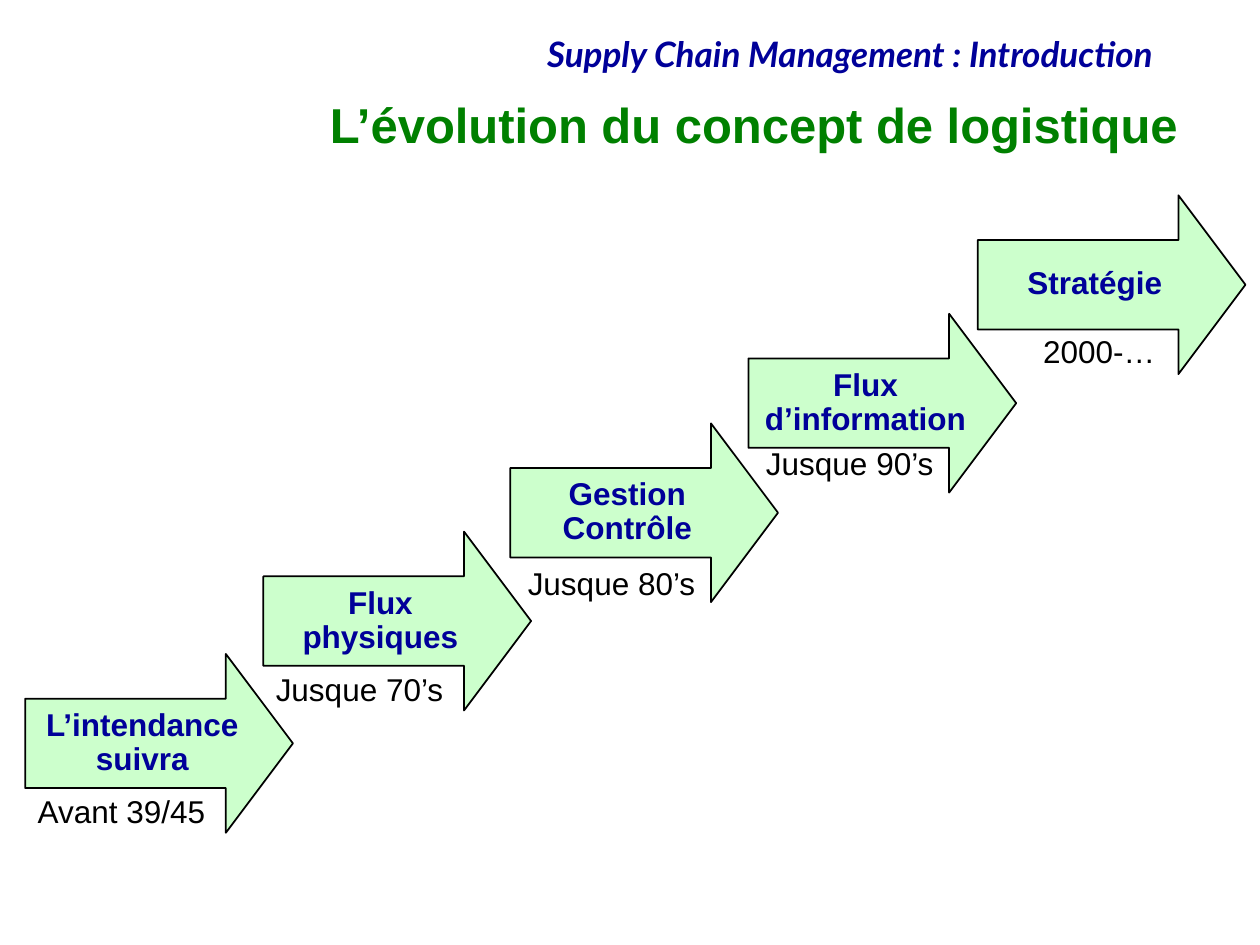
from pptx import Presentation
from pptx.dml.color import RGBColor
from pptx.enum.shapes import MSO_SHAPE as Shape
from pptx.enum.text import MSO_ANCHOR as Anchor, MSO_AUTO_SIZE as Fit, PP_ALIGN as Align
from pptx.util import Pt

HEAD = "Supply Chain Management : Introduction"
TITLE = "L’évolution du concept de logistique"
# label, arrow left and top, date, date left, top and width
STEPS = [
    ("L’intendance suivra", 14.4, 373.7, "Avant 39/45", 14.4, 451.4, 110),
    ("Flux physiques", 150.5, 303.8, "Jusque 70’s", 150.5, 381.6, 110),
    ("Flux d’information", 427.7, 179.3, "Jusque 90’s", 430.6, 252.7, 110),
    ("Gestion\nContrôle", 291.6, 241.9, "Jusque 80’s", 294.5, 321.1, 110),
    ("Stratégie", 558.7, 111.6, "2000-…", 589, 188.6, 79),
]
WIDE, HIGH = 153, 102.2
NAVY, GREEN, MINT, BLACK = "000099", "008000", "CCFFCC", "000000"


def color(code):
    """Turn a hex string into a colour."""
    return RGBColor.from_string(code)


def write(shape, text, size=18, font="Arial", ink=BLACK, bold=False,
          slant=False, align=Align.LEFT, anchor=Anchor.TOP, wrap=True, fit=Fit.NONE):
    """Put formatted text into a shape."""
    frame = shape.text_frame
    frame.word_wrap, frame.auto_size = wrap, fit
    frame.vertical_anchor = anchor
    frame.margin_left = frame.margin_right = Pt(7.2)
    frame.margin_top = frame.margin_bottom = Pt(3.6)
    para = frame.paragraphs[0]
    para.text = text
    para.alignment, para.line_spacing = align, 0.9
    para.space_before = Pt(0)
    for run in para.runs:
        face = run.font
        face.name, face.size = font, Pt(size)
        face.bold, face.italic = bold, slant
        face.color.rgb = color(ink)


def place(shape, *box):
    """Move and size a shape."""
    shape.left, shape.top, shape.width, shape.height = map(Pt, box)


def arrow(slide, text, left, top):
    """Draw one step of the staircase."""
    shape = slide.shapes.add_shape(Shape.RIGHT_ARROW, *map(Pt, (left, top, WIDE, HIGH)))
    shape.adjustments[0], shape.adjustments[1] = 0.5, 0.375
    shape.shadow.inherit = False
    shape.fill.solid()
    shape.fill.fore_color.rgb = color(MINT)
    shape.line.color.rgb = color(BLACK)
    shape.line.width = Pt(1)
    write(shape, text, ink=NAVY, bold=True, align=Align.CENTER, anchor=Anchor.MIDDLE)


def label(slide, text, box, **style):
    """Add a text box."""
    write(slide.shapes.add_textbox(*map(Pt, box)), text, **style)


def main():
    """Build the slide."""
    deck = Presentation()
    deck.slide_width, deck.slide_height = Pt(720), Pt(540)
    slide = deck.slides.add_slide(deck.slide_layouts[5])
    title = slide.shapes.title
    place(title, 110, 54.7, 570.3, 36)
    write(title, TITLE, size=28, ink=GREEN, bold=True, align=Align.RIGHT, anchor=Anchor.MIDDLE)
    label(slide, HEAD, (90, 18, 576, 28.8), size=20, font="Lato", ink=NAVY,
          bold=True, slant=True, align=Align.RIGHT, fit=Fit.SHAPE_TO_FIT_TEXT)
    for name, left, top, date, x, y, wide in STEPS:
        arrow(slide, name, left, top)
        label(slide, date, (x, y, wide, 26.6), wrap=False, fit=Fit.SHAPE_TO_FIT_TEXT)
    deck.save("out.pptx")


if __name__ == "__main__":
    main()
